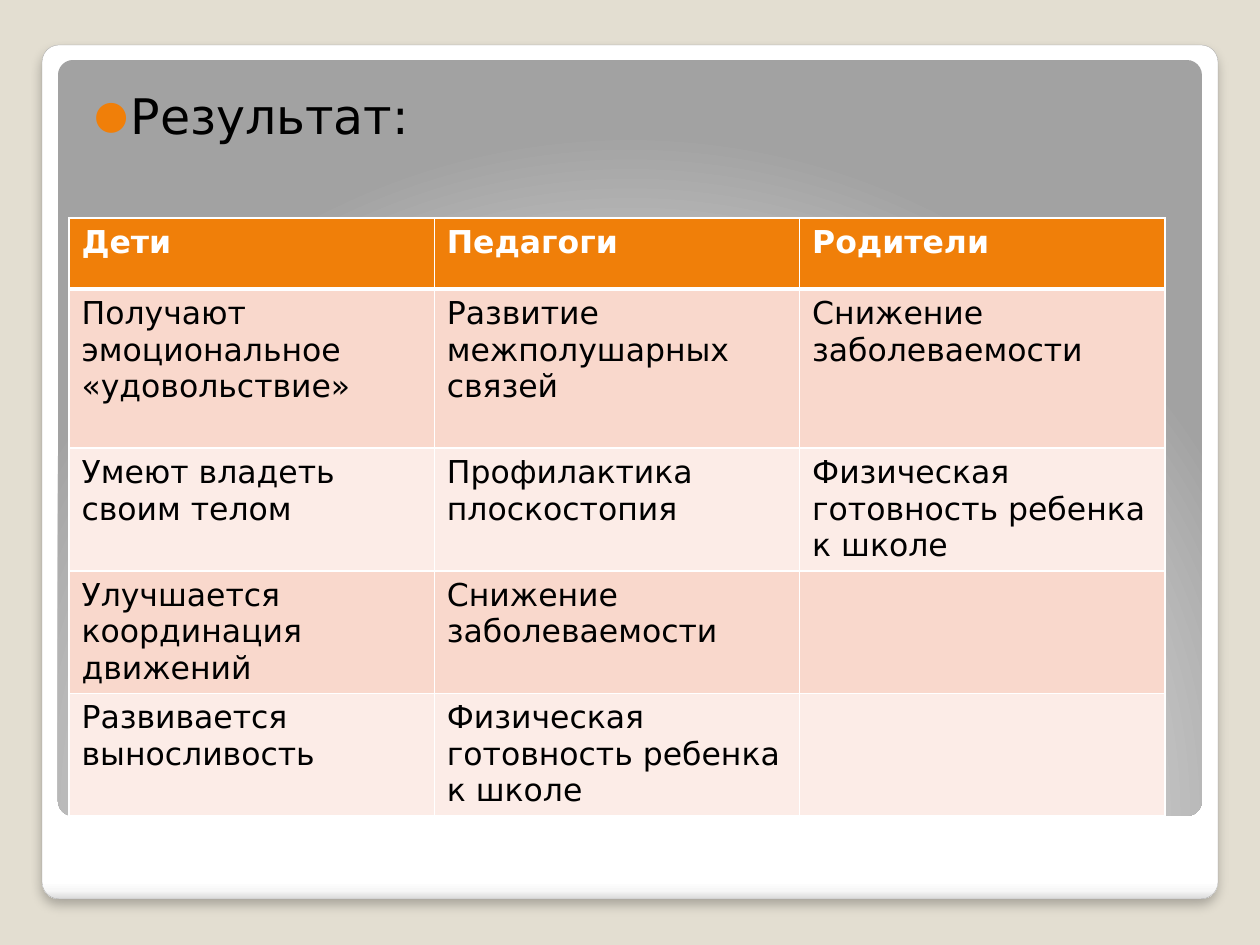
import dataclasses

import lxml.etree
import pptx
import pptx.dml.color
import pptx.enum.shapes
import pptx.oxml
import pptx.oxml.ns
import pptx.presentation
import pptx.shapes.autoshape
import pptx.slide
import pptx.table
import pptx.util

SCALE = 914400 / 126  # EMU in one px


@dataclasses.dataclass(frozen=True)
class Theme:
    font: str = "DejaVu Sans"
    back: str = "E3DED1"
    ink: str = "000000"
    white: str = "FFFFFF"
    accent: str = "F07F09"
    bands: tuple[str, str] = ("F9D8CC", "FCECE7")
    edge: str = "A4A4A4"
    title: int = 28
    cell: int = 18


@dataclasses.dataclass(frozen=True)
class Box:
    left: int
    top: int
    width: int
    height: int


@dataclasses.dataclass(frozen=True)
class Card:
    box: Box
    stops: tuple[tuple[int, str], ...]
    flow: str  # direction element of the gradient
    framed: bool = False


THEME = Theme()
CARDS = (
    Card(Box(42, 45, 1176, 854),
         ((0, "FFFFFF"), (98, "FFFFFF"), (99, "F7F7F7"), (100, "DADADA")),
         '<a:lin ang="5400000" scaled="0"/>', framed=True),
    Card(Box(58, 60, 1144, 756),
         ((0, "FFFFFF"), (55, "E1E1E1"), (100, "A2A2A2")),
         '<a:path path="circle"><a:fillToRect l="50000" t="175000" '
         'r="50000" b="-75000"/></a:path>'),
)
BODY = Box(69, 73, 1128, 577)
TABLE = Box(69, 218, 1096, 597)
HEIGHTS = (71, 159, 123, 122, 122)
ROWS = (
    ("Дети", "Педагоги", "Родители"),
    ("Получают эмоциональное «удовольствие»",
     "Развитие межполушарных\nсвязей", "Снижение заболеваемости"),
    ("Умеют владеть своим телом", "Профилактика плоскостопия",
     "Физическая готовность ребенка к школе"),
    ("Улучшается координация движений", "Снижение заболеваемости", ""),
    ("Развивается выносливость", "Физическая готовность ребенка к школе", ""),
)


def px(size: int) -> int:
    return round(size * SCALE)


def place(box: Box) -> tuple[int, int, int, int]:
    return px(box.left), px(box.top), px(box.width), px(box.height)


def color(code: str) -> pptx.dml.color.RGBColor:
    return pptx.dml.color.RGBColor.from_string(code)


def node(xml: str) -> lxml.etree.ElementBase:
    """Make one drawing element, adding its namespace."""
    head, mark, rest = xml.partition(">")
    space = " " + pptx.oxml.ns.nsdecls("a")
    if head.endswith("/"):
        return pptx.oxml.parse_xml(head[:-1] + space + "/>" + rest)
    return pptx.oxml.parse_xml(head + space + mark + rest)


def style(frame: pptx.text.text.TextFrame, size: int, code: str,
          bold: bool = False) -> None:
    for para in frame.paragraphs:
        for run in para.runs:
            run.font.name = THEME.font
            run.font.size = pptx.util.Pt(size)
            run.font.bold = bold
            run.font.color.rgb = color(code)


def draw_card(slide: pptx.slide.Slide, card: Card) -> None:
    kind = pptx.enum.shapes.MSO_SHAPE.ROUNDED_RECTANGLE
    shape = slide.shapes.add_shape(kind, *place(card.box))
    shape.adjustments[0] = 0.02
    shape.shadow.inherit = False
    props = shape.element.spPr

    # Gradient
    shape.fill.gradient()
    stops = "".join(
        f'<a:gs pos="{pos * 1000}"><a:srgbClr val="{code}"/></a:gs>'
        for pos, code in card.stops)
    grad = node(f'<a:gradFill rotWithShape="1"><a:gsLst>{stops}</a:gsLst>'
                f'{card.flow}</a:gradFill>')
    props.replace(props.find(pptx.oxml.ns.qn("a:gradFill")), grad)

    # Frame and soft shadow
    if not card.framed:
        shape.line.fill.background()
        return
    shape.line.color.rgb = color(THEME.edge)
    shape.line.width = pptx.util.Pt(0.16)
    props.find(pptx.oxml.ns.qn("a:effectLst")).append(node(
        '<a:outerShdw blurRad="76200" dist="50800" dir="5400000" '
        'rotWithShape="0"><a:srgbClr val="000000">'
        '<a:alpha val="25000"/></a:srgbClr></a:outerShdw>'))


def draw_body(slide: pptx.slide.Slide) -> None:
    body = slide.placeholders[1]
    slide.shapes.element.append(body.element)  # in front of the cards
    body.left, body.top, body.width, body.height = place(BODY)
    frame = body.text_frame
    frame.margin_left = pptx.util.Inches(0.2)
    frame.margin_right = frame.margin_top = pptx.util.Inches(0.1)
    frame.margin_bottom = pptx.util.Inches(0.05)
    frame.text = "Результат:"
    style(frame, THEME.title, THEME.ink)

    para = frame.paragraphs[0]
    para.space_before = pptx.util.Pt(2.5)
    props = para._p.get_or_add_pPr()
    indent = pptx.util.Inches(0.29)
    props.set("marL", str(indent))
    props.set("indent", str(-indent))
    for xml in (f'<a:buClr><a:srgbClr val="{THEME.accent}"/></a:buClr>',
                '<a:buSzPct val="80000"/>',
                f'<a:buFont typeface="{THEME.font}"/>',
                '<a:buChar char="●"/>'):
        props.append(node(xml))


def draw_cell(cell: pptx.table._Cell, text: str, row: int) -> None:
    head = row == 0
    cell.text = text
    style(cell.text_frame, THEME.cell, THEME.white if head else THEME.ink, head)
    # Borders go before the fill; a thick rule lies under the header
    props = cell._tc.get_or_add_tcPr()
    for side in "LRTB":
        thick = (row, side) in ((0, "B"), (1, "T"))
        width = pptx.util.Pt(3 if thick else 1)
        props.append(node(
            f'<a:ln{side} w="{width}"><a:solidFill><a:srgbClr '
            f'val="{THEME.white}"/></a:solidFill></a:ln{side}>'))
    cell.fill.solid()
    cell.fill.fore_color.rgb = color(
        THEME.accent if head else THEME.bands[(row - 1) % 2])


def draw_table(slide: pptx.slide.Slide) -> None:
    count = len(ROWS[0])
    table = slide.shapes.add_table(len(ROWS), count, *place(TABLE)).table
    for column in table.columns:
        column.width = px(TABLE.width) // count
    for row, (texts, height) in enumerate(zip(ROWS, HEIGHTS)):
        table.rows[row].height = px(height)
        for col, text in enumerate(texts):
            draw_cell(table.cell(row, col), text, row)


def main() -> None:
    deck = pptx.Presentation()
    deck.slide_width, deck.slide_height = px(1260), px(945)
    slide = deck.slides.add_slide(deck.slide_layouts[1])
    slide.background.fill.solid()
    slide.background.fill.fore_color.rgb = color(THEME.back)
    title = slide.shapes.title.element
    title.getparent().remove(title)

    for card in CARDS:
        draw_card(slide, card)
    draw_body(slide)
    draw_table(slide)
    deck.save("out.pptx")


if __name__ == "__main__":
    main()
